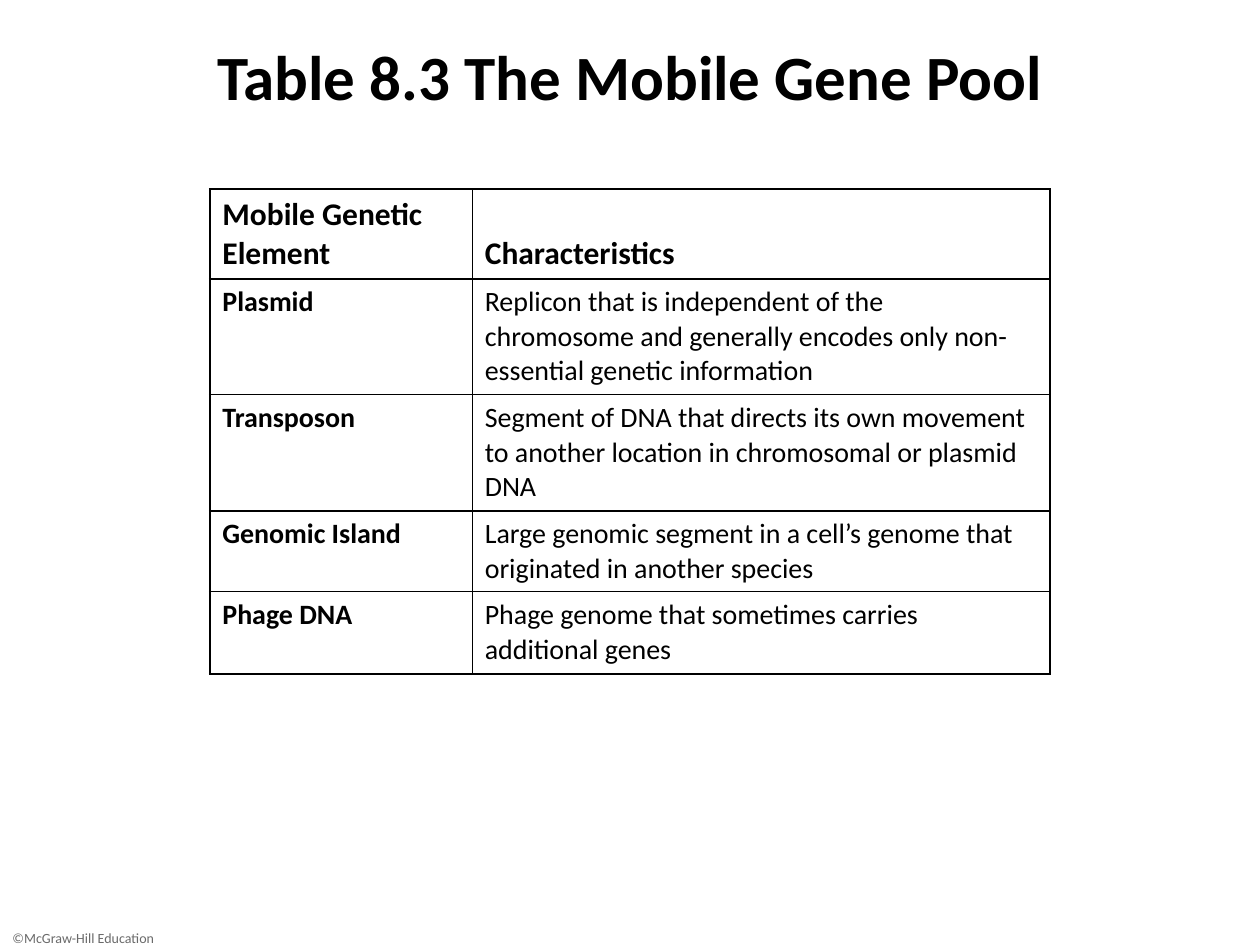
from lxml.etree import SubElement as Sub
from pptx import Presentation as Deck
from pptx.dml.color import RGBColor
from pptx.enum.text import MSO_ANCHOR as Anchor, PP_ALIGN as Align
from pptx.oxml.ns import qn
from pptx.util import Cm, Pt

BLACK = RGBColor(0, 0, 0)
GREY = RGBColor(0x6A, 0x6A, 0x6A)
FACE = "Calibri"


def style(para, size, color, bold=False):
    font = para.font
    font.name, font.size, font.bold = FACE, Pt(size), bold
    font.color.rgb = color


def edge(cell, side, width):
    line = Sub(cell._tc.get_or_add_tcPr(), qn("a:" + side), w=str(Pt(width)))
    fill = Sub(line, qn("a:solidFill"))
    Sub(fill, qn("a:srgbClr"), val=str(BLACK))


deck = Deck()
deck.slide_width, deck.slide_height = Cm(25.4), Cm(19.05)
slide = deck.slides.add_slide(deck.slide_layouts[6])

labels = [
    ("©McGraw-Hill Education", 18.62, 3.81, 0.43, 8, GREY, False, Align.LEFT),
    ("Table 8.3 The Mobile Gene Pool", 0.64, 25.4, 1.7, 36, BLACK, True, Align.CENTER),
]
for text, top, width, height, size, color, bold, align in labels:
    frame = slide.shapes.add_textbox(Cm(0), Cm(top), Cm(width), Cm(height)).text_frame
    frame.word_wrap = True
    frame.text = text
    para = frame.paragraphs[0]
    para.alignment = align
    style(para, size, color, bold)

rows = [
    ("Mobile Genetic Element", "Characteristics"),
    ("Plasmid", "Replicon that is independent of the chromosome and generally "
     "encodes only non-essential genetic information"),
    ("Transposon", "Segment of DNA that directs its own movement to another "
     "location in chromosomal or plasmid DNA"),
    ("Genomic Island", "Large genomic segment in a cell’s genome that originated "
     "in another species"),
    ("Phage DNA", "Phage genome that sometimes carries additional genes"),
]
widths = [5.29, 11.64]
heights = [1.81, 2.34, 2.34, 1.63, 1.65]
grid = slide.shapes.add_table(
    len(rows), 2, Cm(4.23), Cm(3.81), Cm(sum(widths)), Cm(sum(heights))).table
for col, width in zip(grid.columns, widths):
    col.width = Cm(width)
for row, height in zip(grid.rows, heights):
    row.height = Cm(height)

THICK, THIN = 1.25, 0.75
last = len(rows) - 1
for r, row in enumerate(rows):
    for c, text in enumerate(row):
        cell = grid.cell(r, c)
        cell.text = text
        cell.vertical_anchor = Anchor.BOTTOM if r == 0 else Anchor.TOP
        style(cell.text_frame.paragraphs[0], 18 if r == 0 else 16, BLACK, r == 0 or c == 0)
        edge(cell, "lnL", THICK if c == 0 else THIN)
        edge(cell, "lnR", THICK if c == 1 else THIN)
        edge(cell, "lnT", THICK if r < 2 else THIN)
        edge(cell, "lnB", THICK if r in (0, last) else THIN)
        cell.fill.background()

deck.save("out.pptx")
